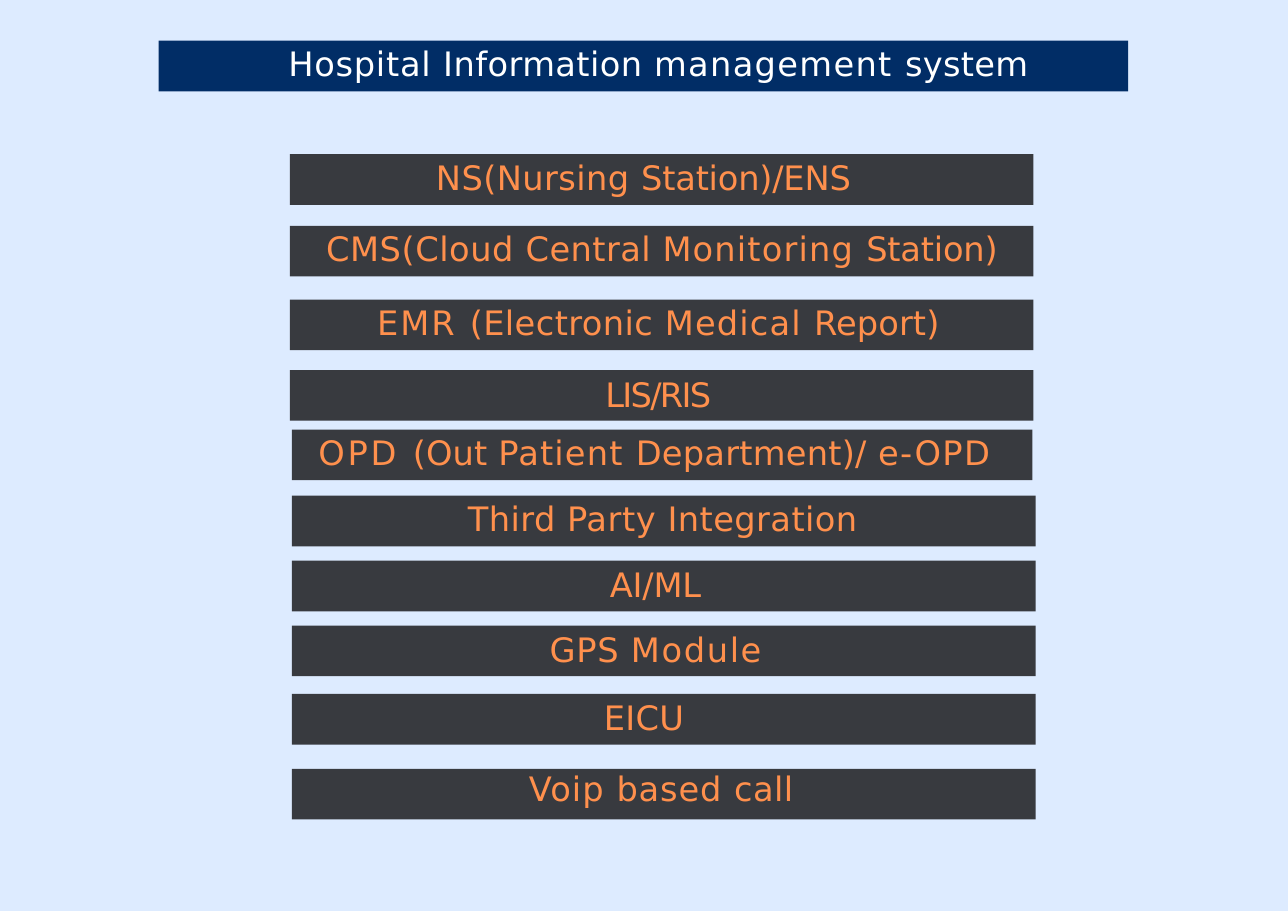
from dataclasses import dataclass

from pptx import Presentation, util as u
from pptx.dml.color import RGBColor
from pptx.enum import shapes, text


@dataclass(frozen=True)
class Theme:
    """Colours and type of the slide."""
    background: str = "DDEBFF"
    title_fill: str = "012D66"
    title_text: str = "FFFFFF"
    module_fill: str = "383A3F"
    module_text: str = "FF904D"
    font: str = "DejaVu Sans"
    size: float = 22


@dataclass(frozen=True)
class Module:
    """One bar: its place, its text runs with letter spacing, and its paragraph format."""
    left: float
    top: float
    runs: tuple
    width: float = 6.75
    format: tuple = ()


THEME = Theme()
SLIDE_WIDTH, SLIDE_HEIGHT = 11.69, 8.27
BAR_HEIGHT = 0.46
UPPER, LOWER = 2.63, 2.65

TITLE_RUNS = (("Hospital ", 0.5), ("Information ", 0.3), ("management ", 0.9), ("system", 0.2))

MODULES = (
    Module(UPPER, 1.4, (("NS(Nursing ", 0.3), ("Station)/ENS", -0.1)),
           format=(("right", 0.33),)),
    Module(UPPER, 2.05, (("CMS(Cloud ", 0.4), ("Central ", 0.3), ("Monitoring ", 0.8),
                         ("Station)", -0.1)),
           format=(("left", 0.33), ("centred", False))),
    Module(UPPER, 2.72, (("EMR ", 1.4), ("(Electronic ", 0.3), ("Medical ", 0.8),
                         ("Report)", 0.1)),
           format=(("right", 0.06), ("before", 1.5))),
    Module(UPPER, 3.36, (("LIS/RIS", -1.1),),
           format=(("right", 0.06), ("inset", 0.03), ("before", 2.5))),
    Module(LOWER, 3.9, (("OPD ", 1.8), ("(Out ", 0.1), ("Patient ", 0.8),
                        ("Department)/ ", 0.2), ("e-OPD", 0.9)), width=6.72,
           format=(("left", 0.24), ("before", 1.6), ("centred", False))),
    Module(LOWER, 4.5, (("Third ", 0.3), ("Party ", 0.4), ("Integration", 0.3)),
           format=(("right", 0.02), ("before", 1.6))),
    Module(LOWER, 5.09, (("AI/ML", -0.1),),
           format=(("right", 0.15), ("inset", 0.03), ("before", 2.4))),
    Module(LOWER, 5.68, (("GPS ", 0.5), ("Module", 1.1)),
           format=(("right", 0.15), ("inset", 0.03), ("before", 2.4))),
    Module(LOWER, 6.3, (("EICU", 0.2),),
           format=(("right", 0.36), ("inset", 0.03), ("before", 1.9))),
    Module(LOWER, 6.98, (("Voip ", 0.7), ("based ", 0.6), ("call", 0.3)),
           format=(("right", 0.05), ("inset", 0), ("before", 0), ("line", 25.8))),
)


def write_text(shape, runs, *, color, left=0, right=0, inset=0.02, before=1.2,
               line=None, centred=True):
    """Write letter-spaced runs as one paragraph in the shape."""
    frame = shape.text_frame
    frame.word_wrap = True
    frame.vertical_anchor = text.MSO_ANCHOR.TOP
    frame.margin_left, frame.margin_right = u.Inches(left), u.Inches(right)
    frame.margin_top, frame.margin_bottom = u.Inches(inset), 0
    paragraph = frame.paragraphs[0]
    paragraph.alignment = text.PP_ALIGN.CENTER if centred else text.PP_ALIGN.LEFT
    paragraph.space_before = u.Pt(before)
    if line:
        paragraph.line_spacing = u.Pt(line)
    for words, spacing in runs:
        run = paragraph.add_run()
        run.text = words
        run.font.name = THEME.font
        run.font.size = u.Pt(THEME.size)
        run.font.color.rgb = RGBColor.from_string(color)
        run._r.get_or_add_rPr().set("spc", str(round(spacing * 100)))


def add_block(slide, left, top, width, height, fill):
    """Add a plain filled rectangle and return it."""
    shape = slide.shapes.add_shape(
        shapes.MSO_SHAPE.RECTANGLE,
        u.Inches(left), u.Inches(top), u.Inches(width), u.Inches(height))
    shape.shadow.inherit = False
    shape.fill.solid()
    shape.fill.fore_color.rgb = RGBColor.from_string(fill)
    shape.line.fill.background()
    return shape


def add_title(slide, left, top, width):
    """Add the title bar."""
    bar = add_block(slide, left, top, width, BAR_HEIGHT, THEME.title_fill)
    write_text(bar, TITLE_RUNS, color=THEME.title_text, left=0.27)


def add_modules(slide, modules):
    """Add one bar for each module of the system."""
    for module in modules:
        bar = add_block(slide, module.left, module.top, module.width, BAR_HEIGHT,
                        THEME.module_fill)
        write_text(bar, module.runs, color=THEME.module_text, **dict(module.format))


def main():
    """Build and save the slide."""
    presentation = Presentation()
    presentation.slide_width = u.Inches(SLIDE_WIDTH)
    presentation.slide_height = u.Inches(SLIDE_HEIGHT)
    slide = presentation.slides.add_slide(presentation.slide_layouts[6])
    add_block(slide, 0, 0, SLIDE_WIDTH, SLIDE_HEIGHT, THEME.background)
    add_title(slide, 1.44, 0.37, 8.8)
    add_modules(slide, MODULES)
    presentation.save("out.pptx")


if __name__ == "__main__":
    main()
